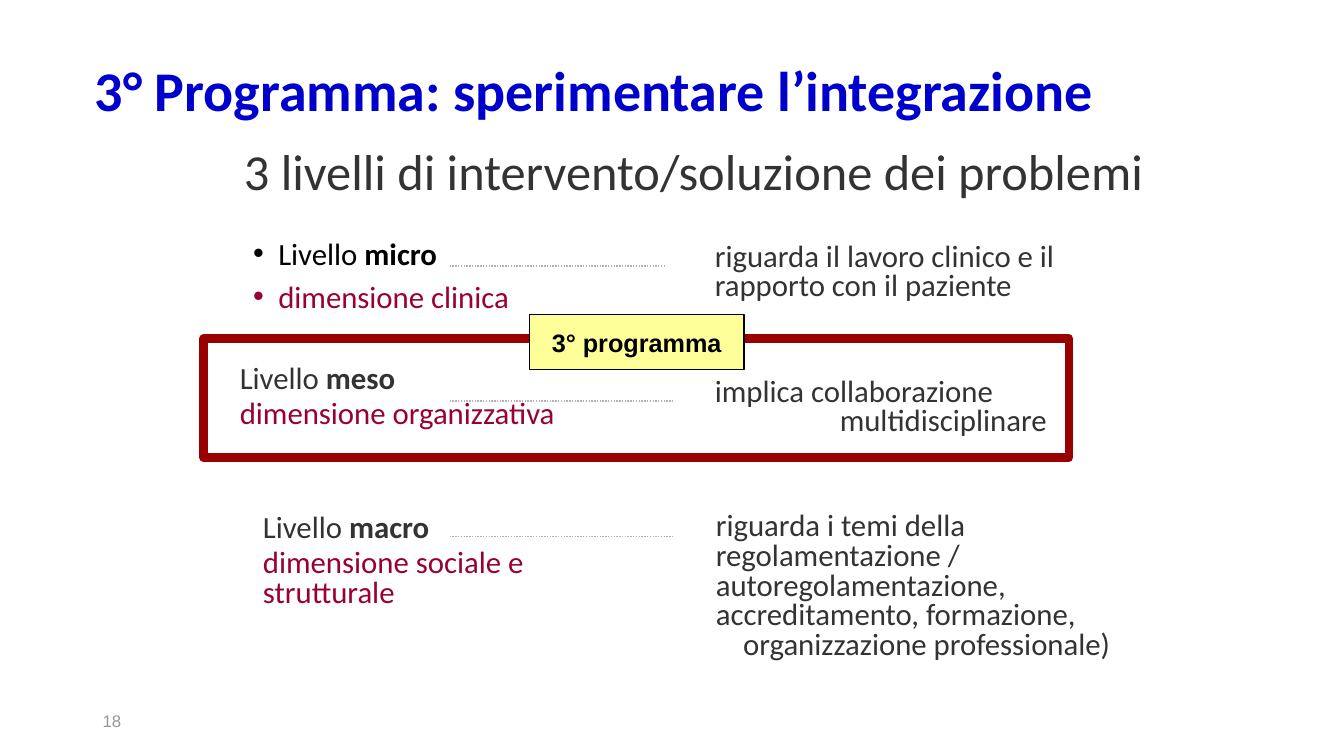
from lxml import etree
from pptx import Presentation
from pptx import util as u
from pptx.dml.color import RGBColor
from pptx.enum import dml, shapes, text
from pptx.oxml import ns

BLUE = RGBColor(0x00, 0x00, 0xCC)
CRIMSON = RGBColor(0x99, 0x00, 0x33)
DARK_RED = RGBColor(0x99, 0x00, 0x00)
YELLOW = RGBColor(0xFF, 0xFF, 0x99)
BLACK = RGBColor(0x00, 0x00, 0x00)
CHARCOAL = RGBColor(0x33, 0x33, 0x33)
GREY = RGBColor(0x96, 0x96, 0x96)
DOT_GREY = RGBColor(0xB2, 0xB2, 0xB2)


def place(part, left, top, width, height):
    part.left, part.top = u.Inches(left), u.Inches(top)
    part.width, part.height = u.Inches(width), u.Inches(height)


def style(paragraph, size, color, bold=False, name="Calibri"):
    font = paragraph.font
    font.size, font.name, font.bold = u.Pt(size), name, bold
    font.color.rgb = color


def indent(paragraph, left, first=0):
    properties = paragraph._p.get_or_add_pPr()
    properties.set("marL", str(u.Inches(left)))
    properties.set("indent", str(u.Inches(first)))


def set_frame(frame, side=0.1, edge=0.05, anchor=text.MSO_ANCHOR.MIDDLE,
              fit=text.MSO_AUTO_SIZE.NONE):
    frame.word_wrap = True
    frame.auto_size = fit
    frame.vertical_anchor = anchor
    frame.margin_left = frame.margin_right = u.Inches(side)
    frame.margin_top = frame.margin_bottom = u.Inches(edge)


def add_box(slide, at, **frame_options):
    frame = slide.shapes.add_textbox(*map(u.Inches, at)).text_frame
    set_frame(frame, **frame_options)
    return frame


def write_level(frame, level, dimension, color=CHARCOAL, left=0.1, first=0, before=0, after=4.4):
    heading, detail = frame.paragraphs[0], frame.add_paragraph()
    heading.add_run().text = "Livello "
    name = heading.add_run()
    name.text = level
    name.font.bold = True
    detail.text = dimension
    detail.space_before = u.Pt(before)
    heading.space_before = u.Pt(0)
    for paragraph, ink in ((heading, color), (detail, CRIMSON)):
        indent(paragraph, left, first)
        paragraph.line_spacing = 0.8
        paragraph.space_after = u.Pt(after)
        style(paragraph, 22, ink)


def add_description(slide, at, lines):
    frame = add_box(slide, at, side=0.08, edge=0.08, fit=text.MSO_AUTO_SIZE.SHAPE_TO_FIT_TEXT)
    for number, (words, left) in enumerate(lines):
        paragraph = frame.add_paragraph() if number else frame.paragraphs[0]
        paragraph.text = words
        indent(paragraph, left)
        paragraph.line_spacing = 0.8
        paragraph.space_after = u.Pt(4.4 if number == len(lines) - 1 else 0)
        style(paragraph, 22, CHARCOAL)


def add_leader(slide, y, right):
    leader = slide.shapes.add_connector(
        shapes.MSO_CONNECTOR.STRAIGHT, u.Inches(4.46), u.Inches(y), u.Inches(right), u.Inches(y))
    leader.line.color.rgb = DOT_GREY
    leader.line.width = u.Pt(1)
    leader.line.dash_style = dml.MSO_LINE.ROUND_DOT
    etree.SubElement(leader._element.spPr, ns.qn("a:effectLst"))


def add_rectangle(slide, at, line_color, line_width, fill=None):
    rectangle = slide.shapes.add_shape(shapes.MSO_SHAPE.RECTANGLE, *map(u.Inches, at))
    rectangle.shadow.inherit = False
    rectangle.line.color.rgb = line_color
    rectangle.line.width = u.Pt(line_width)
    if fill is None:
        rectangle.fill.background()
    else:
        rectangle.fill.solid()
        rectangle.fill.fore_color.rgb = fill
    return rectangle


def add_title(slide):
    title = slide.shapes.title
    place(title, 0.84, 0.56, 11.5, 0.73)
    set_frame(title.text_frame)
    heading = title.text_frame.paragraphs[0]
    heading.text = "3° Programma: sperimentare l’integrazione"
    heading.alignment = text.PP_ALIGN.LEFT
    heading.line_spacing = 0.9
    style(heading, 40, BLUE, bold=True)


def add_levels(slide):
    grow = text.MSO_AUTO_SIZE.SHAPE_TO_FIT_TEXT
    micro = slide.placeholders[1]
    place(micro, 2.41, 2.3, 3.46, 0.92)
    set_frame(micro.text_frame, edge=0.09, fit=grow)
    write_level(micro.text_frame, "micro", "dimensione clinica", BLACK,
                left=0.25, first=-0.25, before=10, after=0)
    for at, level, dimension in (
        ((2.18, 3.52, 3.54, 0.86), "meso", "dimensione organizzativa"),
        ((2.41, 5, 3.54, 1.15), "macro", "dimensione sociale e strutturale"),
    ):
        write_level(add_box(slide, at, edge=0.09, fit=grow), level, dimension)


def add_descriptions(slide):
    add_description(slide, (6.91, 2.33, 3.9, 0.76), [
        ("riguarda il lavoro clinico e il rapporto con il paziente", 0.1)])
    add_description(slide, (6.91, 3.67, 3.94, 0.76), [
        ("implica collaborazione", 0.1), ("multidisciplinare", 1.34)])
    add_description(slide, (7.02, 5, 4.21, 1.65), [
        ("riguarda i temi della regolamentazione / autoregolamentazione, "
         "accreditamento, formazione,", 0),
        ("organizzazione professionale)", 0.27)])


def add_subtitle(slide):
    frame = add_box(slide, (1.67, 1.23, 10, 0.94), side=0.26, edge=0.25,
                    anchor=text.MSO_ANCHOR.TOP)
    subtitle = frame.paragraphs[0]
    subtitle.text = "3 livelli di intervento/soluzione dei problemi"
    indent(subtitle, 0.49)
    subtitle.line_spacing = 0.85
    style(subtitle, 36, CHARCOAL)


def add_programme(slide):
    add_rectangle(slide, (2.02, 3.36, 8.58, 1.18), DARK_RED, 6)
    tag = add_rectangle(slide, (5.25, 3.12, 2.13, 0.55), BLACK, 0.75, YELLOW)
    set_frame(tag.text_frame)
    tag.text_frame.word_wrap = False
    label = tag.text_frame.paragraphs[0]
    label.text = "3° programma"
    label.alignment = text.PP_ALIGN.CENTER
    style(label, 18, BLACK, bold=True, name="Arial")


def add_page_number(slide):
    number = add_box(slide, (0.92, 6.95, 3, 0.4)).paragraphs[0]
    number.text = "18"
    style(number, 12, GREY, name="Arial")


def main():
    deck = Presentation()
    deck.slide_width, deck.slide_height = u.Inches(13.33), u.Inches(7.5)
    slide = deck.slides.add_slide(deck.slide_layouts[1])
    add_page_number(slide)
    add_title(slide)
    add_levels(slide)
    add_descriptions(slide)
    for y, right in ((2.64, 6.59), (3.98, 6.67), (5.32, 6.67)):
        add_leader(slide, y, right)
    add_subtitle(slide)
    add_programme(slide)
    deck.save("out.pptx")


if __name__ == "__main__":
    main()
